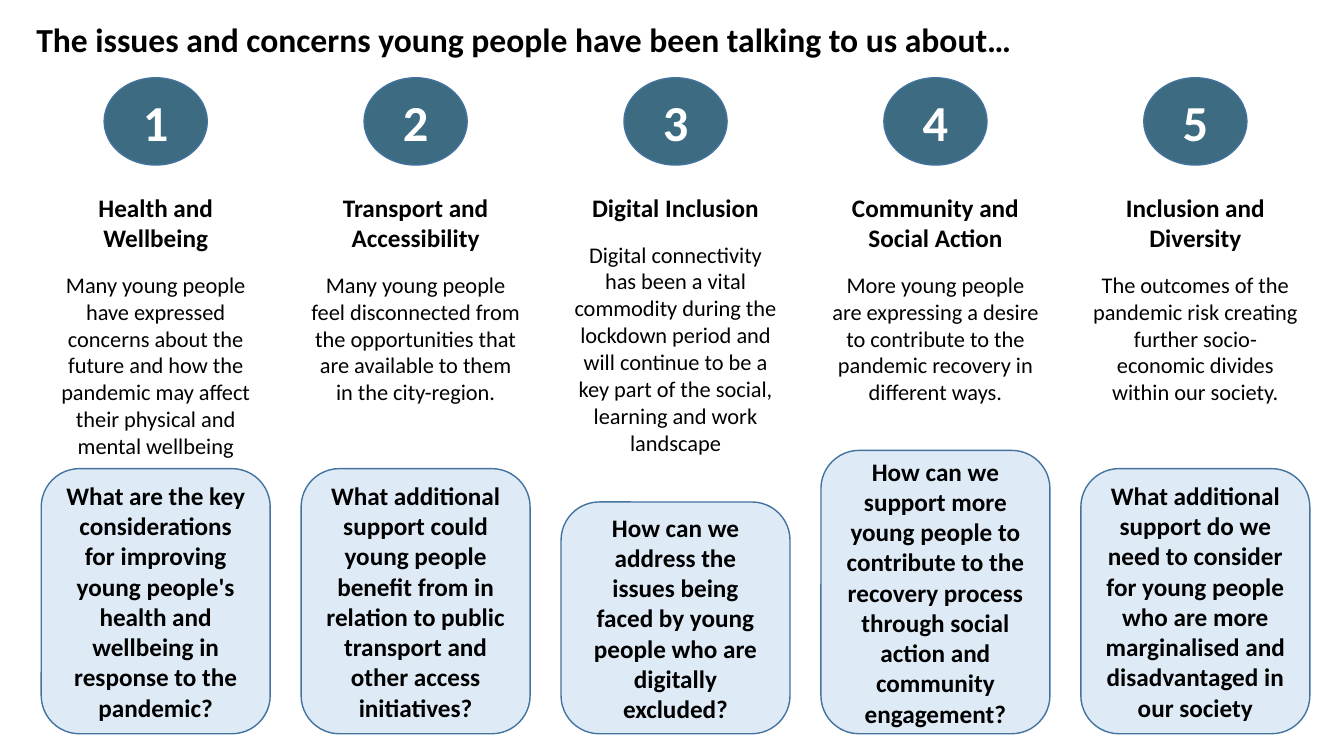
from pptx import Presentation
from pptx.dml.color import RGBColor
from pptx.enum.shapes import MSO_SHAPE as Preset
from pptx.enum.text import MSO_ANCHOR as Anchor, MSO_AUTO_SIZE as AutoSize, PP_ALIGN as Align
from pptx.util import Cm, Pt

COLOURS = {"text": "000000", "number": "FFFFFF", "badge": "3C6B82",
           "question": "DEEBF7", "outline": "43739E"}

COLUMN_LEFT, COLUMN_STEP, COLUMN_WIDTH = 1.04, 6.55, 5.77
BADGE_TOP, BADGE_WIDTH, BADGE_HEIGHT = 1.96, 2.6, 2.2
TOPIC_TOP = 4.72
QUESTION_BOTTOM = 18.49

ISSUES = [
    ("Health and Wellbeing",
     "Many young people have expressed concerns about the future and how the "
     "pandemic may affect their physical and mental wellbeing",
     "What are the key considerations for improving young people's health and "
     "wellbeing in response to the pandemic?", 7.04, 6.68),
    ("Transport and Accessibility",
     "Many young people feel disconnected from the opportunities that are "
     "available to them in the city-region.",
     "What additional support could young people benefit from in relation to "
     "public transport and other access initiatives?", 6.35, 6.68),
    ("Digital Inclusion",
     "Digital connectivity has been a vital commodity during the lockdown period "
     "and will continue to be a key part of the social, learning and work landscape",
     "How can we address the issues being faced by young people who are "
     "digitally excluded?", 6.93, 5.84),
    ("Community and Social Action",
     "More young people are expressing a desire to contribute to the pandemic "
     "recovery in different ways.",
     "How can we support more young people to contribute to the recovery process "
     "through social action and community engagement?", 5.69, 7.14),
    ("Inclusion and Diversity",
     "The outcomes of the pandemic risk creating further socio-economic divides "
     "within our society.",
     "What additional support do we need to consider for young people who are "
     "more marginalised and disadvantaged in our society", 5.69, 6.68),
]


class IssuesSlide:
    font = "Calibri"

    def __init__(self, deck):
        self.slide = deck.slides.add_slide(deck.slide_layouts[5])

    def add_words(self, paragraph, text, size, colour="text", bold=True, align=Align.CENTER):
        paragraph.alignment = align
        run = paragraph.add_run()
        run.text = text
        run.font.name = self.font
        run.font.size = Pt(size)
        run.font.bold = bold
        run.font.color.rgb = RGBColor.from_string(COLOURS[colour])

    def add_title(self, text, left, top, width, height):
        heading = self.slide.shapes.title
        heading.left, heading.top = Cm(left), Cm(top)
        heading.width, heading.height = Cm(width), Cm(height)
        frame = heading.text_frame
        frame.auto_size = AutoSize.NONE
        frame.vertical_anchor = Anchor.TOP
        self.add_words(frame.paragraphs[0], text, 24, align=Align.LEFT)

    def add_panel(self, preset, text, left, top, width, height, fill, size, colour="text"):
        panel = self.slide.shapes.add_shape(preset, Cm(left), Cm(top), Cm(width), Cm(height))
        panel.shadow.inherit = False
        panel.fill.solid()
        panel.fill.fore_color.rgb = RGBColor.from_string(COLOURS[fill])
        panel.line.color.rgb = RGBColor.from_string(COLOURS["outline"])
        panel.line.width = Pt(1)
        panel.text_frame.word_wrap = True
        panel.text_frame.vertical_anchor = Anchor.MIDDLE
        self.add_words(panel.text_frame.paragraphs[0], text, size, colour)

    def add_topic(self, name, concern, left, top, width, height):
        topic = self.slide.shapes.add_textbox(Cm(left), Cm(top), Cm(width), Cm(height))
        frame = topic.text_frame
        frame.word_wrap = True
        self.add_words(frame.paragraphs[0], name, 18)
        detail = frame.add_paragraph()
        detail.space_before = Pt(13)
        self.add_words(detail, concern, 16, bold=False)


def main():
    deck = Presentation()
    deck.slide_width, deck.slide_height = Cm(33.87), Cm(19.05)
    page = IssuesSlide(deck)
    page.add_title("The issues and concerns young people have been talking to us about…",
                   0.66, 0.36, 31.7, 1.27)
    for index, (name, concern, question, topic_height, question_height) in enumerate(ISSUES):
        left = COLUMN_LEFT + index * COLUMN_STEP
        page.add_panel(Preset.ROUNDED_RECTANGLE, question, left,
                       QUESTION_BOTTOM - question_height,
                       COLUMN_WIDTH, question_height, "question", 18)
        page.add_panel(Preset.OVAL, str(index + 1), left + (COLUMN_WIDTH - BADGE_WIDTH) / 2,
                       BADGE_TOP, BADGE_WIDTH, BADGE_HEIGHT, "badge", 36, "number")
        page.add_topic(name, concern, left, TOPIC_TOP, COLUMN_WIDTH, topic_height)
    deck.save("out.pptx")


if __name__ == "__main__":
    main()
